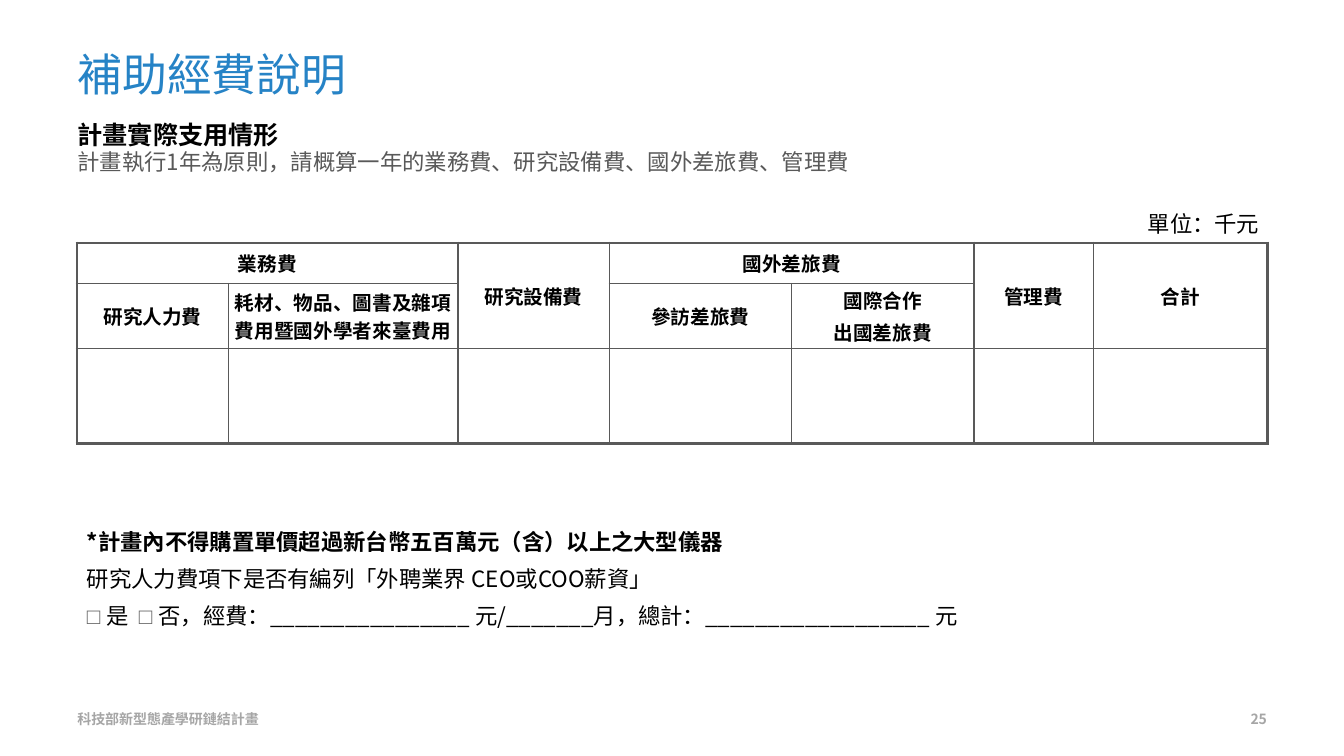
import pptx
import pptx.dml.color
import pptx.enum.text
import pptx.oxml
import pptx.oxml.ns
import pptx.util
from pptx.util import Cm

SIMPLIFIED = "Noto Sans CJK SC"
TRADITIONAL = "Noto Sans CJK TC"
BLACK, GREY, LIGHT_GREY, BLUE = "000000", "595959", "A6A6A6", "2683C6"
LEFT = pptx.enum.text.PP_ALIGN.LEFT
CENTER = pptx.enum.text.PP_ALIGN.CENTER
RIGHT = pptx.enum.text.PP_ALIGN.RIGHT
MIDDLE = pptx.enum.text.MSO_ANCHOR.MIDDLE
TOP = pptx.enum.text.MSO_ANCHOR.TOP

COLUMN_WIDTHS = [3.81, 5.79, 3.81, 4.6, 4.6, 3, 4.39]
ROW_HEIGHTS = [1.02, 1.65, 2.39]
HEADINGS = {
    (0, 0, 0, 1): ["業務費"],
    (0, 2, 1, 2): ["研究設備費"],
    (0, 3, 0, 4): ["國外差旅費"],
    (0, 5, 1, 5): ["管理費"],
    (0, 6, 1, 6): ["合計"],
    (1, 0, 1, 0): ["研究人力費"],
    (1, 1, 1, 1): ["耗材、物品、圖書及雜項費用暨國外學者來臺費用"],
    (1, 3, 1, 3): ["參訪差旅費"],
    (1, 4, 1, 4): ["國際合作", "出國差旅費"],
}


def color(value):
    """Return the colour for a hex string."""
    return pptx.dml.color.RGBColor.from_string(value)


def write_text(paragraph, text, size=16, font=SIMPLIFIED, fill=BLACK, bold=False):
    """Add one formatted run to a paragraph."""
    run = paragraph.add_run()
    run.text = text
    run.font.size = pptx.util.Pt(size)
    run.font.bold = bold
    run.font.color.rgb = color(fill)
    run.font.name = font
    properties = run.font._element
    east_asian = properties.makeelement(pptx.oxml.ns.qn("a:ea"), {"typeface": font})
    properties.find(pptx.oxml.ns.qn("a:latin")).addnext(east_asian)


def next_paragraph(frame, index, align=LEFT, spacing=1.0, before=0):
    """Return the paragraph at an index, adding it when it is not the first."""
    paragraph = frame.add_paragraph() if index else frame.paragraphs[0]
    paragraph.alignment = align
    paragraph.line_spacing = spacing
    paragraph.space_before = pptx.util.Pt(before if index else 0)
    return paragraph


def place(shape, box, anchor=TOP):
    """Move a shape to a box in centimetres and return its text frame."""
    shape.left, shape.top, shape.width, shape.height = map(Cm, box)
    frame = shape.text_frame
    frame.word_wrap = True
    frame.auto_size = pptx.enum.text.MSO_AUTO_SIZE.NONE
    frame.vertical_anchor = anchor
    return frame


def add_label(slide, box, text, align=LEFT, anchor=TOP, **text_format):
    """Add a text box holding one line."""
    frame = place(slide.shapes.add_textbox(0, 0, 0, 0), box, anchor)
    write_text(next_paragraph(frame, 0, align), text, **text_format)


def fill_heading(slide, box):
    """Fill the title and the introduction below it."""
    left, top, width, height = box
    title_height = 2.18
    title = place(slide.shapes.title, (left, top, width, title_height), MIDDLE)
    write_text(next_paragraph(title, 0), "補助經費說明", size=32, fill=BLUE)

    body_box = (left, top + title_height, width, height - title_height)
    body = place(slide.placeholders[1], body_box)
    lines = [
        ("計畫實際支用情形", {"size": 18, "bold": True}),
        ("計畫執行1年為原則，請概算一年的業務費、研究設備費、國外差旅費、管理費", {"fill": GREY}),
    ]
    for index, (text, text_format) in enumerate(lines):
        paragraph = next_paragraph(body, index, spacing=0.95)
        properties = paragraph._p.get_or_add_pPr()
        properties.set("marL", "0")
        properties.set("indent", "0")
        properties.append(properties.makeelement(pptx.oxml.ns.qn("a:buNone"), {}))
        write_text(paragraph, text, font=TRADITIONAL, **text_format)


def set_borders(cell, widths):
    """Draw the left, right, top and bottom borders of a cell in points."""
    properties = cell._tc.get_or_add_tcPr()
    for side, width in zip("LRTB", widths):
        properties.append(pptx.oxml.parse_xml(
            f'<a:ln{side} {pptx.oxml.ns.nsdecls("a")} w="{pptx.util.Pt(width)}">'
            f'<a:solidFill><a:srgbClr val="{GREY}"/></a:solidFill></a:ln{side}>'))


def add_budget_table(slide, box):
    """Add the unit label and the budget table beneath it."""
    left, top, width, height = box
    label_width, label_height = 4.04, 0.94
    add_label(slide, (left + width - label_width + 0.05, top, label_width, label_height),
              "單位：千元", align=RIGHT)
    last_row, last_column = len(ROW_HEIGHTS) - 1, len(COLUMN_WIDTHS) - 1
    table = slide.shapes.add_table(
        last_row + 1, last_column + 1,
        Cm(left), Cm(top + label_height), Cm(width), Cm(height - label_height)).table
    table.first_row = table.horz_banding = False
    for column, column_width in zip(table.columns, COLUMN_WIDTHS):
        column.width = Cm(column_width)
    for row, row_height in zip(table.rows, ROW_HEIGHTS):
        row.height = Cm(row_height)

    for row in range(last_row + 1):
        for column in range(last_column + 1):
            cell = table.cell(row, column)
            edges = (column == 0, column == last_column, row == 0, row == last_row)
            set_borders(cell, [2.25 if edge else 1 for edge in edges])
            cell.fill.background()
            cell.vertical_anchor = MIDDLE
            cell.margin_left = cell.margin_right = Cm(0.05)
            cell.margin_top = cell.margin_bottom = 0

    for (row, column, end_row, end_column), lines in HEADINGS.items():
        cell = table.cell(row, column)
        if (row, column) != (end_row, end_column):
            cell.merge(table.cell(end_row, end_column))
        for index, text in enumerate(lines):
            paragraph = next_paragraph(cell.text_frame, index, CENTER, before=2)
            write_text(paragraph, text, size=14, bold=True)


def add_notes_on_pay(slide, box):
    """Add the purchase rule and the salary question with its check boxes."""
    frame = place(slide.shapes.add_textbox(0, 0, 0, 0), box)
    normal = {"font": TRADITIONAL}
    strong = {"font": TRADITIONAL, "bold": True}
    check_box = ("□ ", {"font": "Arial", "fill": "666666"})
    lines = [
        [("*計畫內不得購置單價超過新台幣五百萬元（含）以上之大型儀器", strong)],
        [("研究人力費項下是否有編列「外聘業界 CEO或COO薪資」", normal)],
        [check_box, ("是  ", normal), check_box,
         ("否，經費：________________ 元/_______月，總計：__________________ 元", normal)],
    ]
    for index, runs in enumerate(lines):
        paragraph = next_paragraph(frame, index, spacing=1.38)
        for text, text_format in runs:
            write_text(paragraph, text, **text_format)


def add_footer(slide, box):
    """Add the programme name and the page number at the two ends of a box."""
    left, top, width, height = box
    part = 7.9
    for offset, text, align in [(0, "科技部新型態產學研鏈結計畫", LEFT), (width - part, "25", RIGHT)]:
        add_label(slide, (left + offset, top, part, height), text, align, MIDDLE,
                  size=10, fill=LIGHT_GREY, bold=True)


def main():
    """Build the slide and save it."""
    presentation = pptx.Presentation()
    presentation.slide_width, presentation.slide_height = Cm(33.87), Cm(19.05)
    slide = presentation.slides.add_slide(presentation.slide_layouts[1])
    fill_heading(slide, (1.7, 0.76, 30.48, 4.75))
    add_budget_table(slide, (1.94, 5.18, 30, 6))
    add_notes_on_pay(slide, (1.94, 12.93, 30.12, 3.61))
    add_footer(slide, (1.7, 17.6, 30.48, 1.02))
    presentation.save("out.pptx")


if __name__ == "__main__":
    main()
